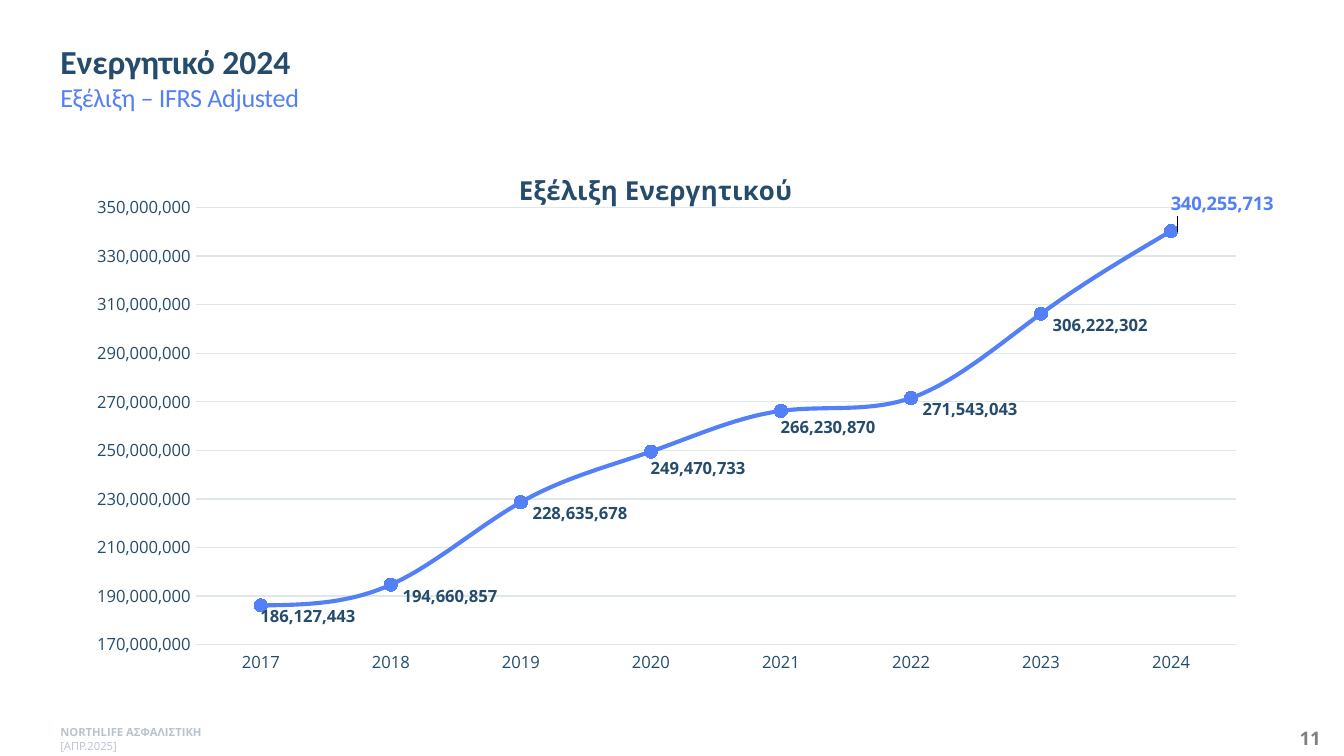
from lxml.etree import SubElement
from pptx import Presentation
from pptx.chart.data import CategoryChartData
from pptx.dml.color import RGBColor
from pptx.enum.chart import XL_CHART_TYPE, XL_LABEL_POSITION, XL_MARKER_STYLE, XL_TICK_MARK
from pptx.enum.text import MSO_AUTO_SIZE
from pptx.oxml import parse_xml
from pptx.oxml.ns import nsdecls, qn
from pptx.util import Cm, Pt

NAVY = RGBColor(0x25, 0x4C, 0x6D)
BLUE = RGBColor(0x54, 0x80, 0xF7)
GRID = RGBColor(0xE0, 0xE7, 0xEA)
PALE = RGBColor(0xB8, 0xC2, 0xD2)
GRAY = RGBColor(0x80, 0x80, 0x80)

ASSETS = {
    "2017": 186127443,
    "2018": 194660857,
    "2019": 228635678,
    "2020": 249470733,
    "2021": 266230870,
    "2022": 271543043,
    "2023": 306222302,
    "2024": 340255713,
}
LABEL_OFFSETS = [
    (-0.01, 0.02), (0, 0.02), (0, 0.02), (-0.01, 0.03),
    (-0.01, 0.03), (0, 0.02), (0, 0.02), (-0.01, -0.05),
]


def style_font(font, size, color, bold=False, name="Open Sans"):
    font.name = name
    font.size = Pt(size)
    font.bold = bold
    font.color.rgb = color


def add_text(page, left, top, width, height, text, styles, wrap=True, fit=True):
    box = page.shapes.add_textbox(Cm(left), Cm(top), Cm(width), Cm(height))
    frame = box.text_frame
    frame.word_wrap = wrap
    if fit:
        frame.auto_size = MSO_AUTO_SIZE.SHAPE_TO_FIT_TEXT
    paragraph = frame.paragraphs[0]
    paragraph.text = text
    for span, style in zip(paragraph.runs, styles):
        style_font(span.font, *style)
    return frame


def add_heading(page):
    frame = add_text(
        page, 0.89, 0.53, 16.99, 1.47,
        "Ενεργητικό 2024\vΕξέλιξη – IFRS Adjusted",
        [(18, NAVY, True, "Calibri"), (14, BLUE, False, "Calibri")], fit=False,
    )
    frame.margin_top = frame.margin_bottom = Cm(0.25)
    subtitle = frame.paragraphs[0].runs[1]
    subtitle.font._element.set("spc", "-20")


def add_footer(page):
    frame = add_text(page, 0.89, 13.59, 4.27, 0.51, "NORTHLIFE ΑΣΦΑΛΙΣΤΙΚΗ  ",
                     [(6, PALE, True)], wrap=False)
    span = frame.paragraphs[0].add_run()
    span.text = "[ΑΠΡ.2025]"
    style_font(span.font, 6, PALE)
    add_text(page, 24.31, 13.61, 0.91, 0.69, "11", [(10, GRAY, True)])


def set_layout(parent, index, **values):
    for old in parent.findall(qn("c:layout")):
        parent.remove(old)
    layout = parse_xml(f"<c:layout {nsdecls('c')}><c:manualLayout/></c:layout>")
    for tag, value in values.items():
        SubElement(layout[0], qn(f"c:{tag}")).set("val", str(value))
    parent.insert(index, layout)


def style_axes(chart):
    for axis in (chart.category_axis, chart.value_axis):
        style_font(axis.tick_labels.font, 9, NAVY)
        axis.major_tick_mark = axis.minor_tick_mark = XL_TICK_MARK.NONE
    line = chart.category_axis.format.line
    line.color.rgb = GRID
    line.width = Pt(0.75)
    values = chart.value_axis
    values.minimum_scale = 170000000
    values.maximum_scale = 350000000
    values.major_unit = 20000000
    values.tick_labels.number_format = "#,##0"
    values.tick_labels.number_format_is_linked = False
    values.format.line.fill.background()
    values.major_gridlines.format.line.color.rgb = GRID
    values.major_gridlines.format.line.width = Pt(0.75)


def style_series(series):
    series.smooth = True
    series.format.line.color.rgb = BLUE
    series.format.line.width = Pt(2.25)
    marker = series.marker
    marker.style = XL_MARKER_STYLE.CIRCLE
    marker.size = 7
    marker.format.fill.solid()
    marker.format.fill.fore_color.rgb = BLUE
    marker.format.line.color.rgb = BLUE


def place_labels(series):
    labels = series.data_labels
    labels.show_value = True
    style_font(labels.font, 9, NAVY, True)
    last = len(LABEL_OFFSETS) - 1
    for index in range(len(LABEL_OFFSETS)):
        label = series.points[index].data_label
        label.position = XL_LABEL_POSITION.RIGHT
        size, color = (10, BLUE) if index == last else (9, NAVY)
        style_font(label.font, size, color, True)
    elements = series._element.findall(".//" + qn("c:dLbl"))
    for element, (across, down) in zip(elements, LABEL_OFFSETS):
        set_layout(element, 1, x=across, y=down)


def add_assets_chart(page):
    data = CategoryChartData(number_format="#,##0")
    data.categories = list(ASSETS)
    data.add_series("Series 1", list(ASSETS.values()))
    chart = page.shapes.add_chart(
        XL_CHART_TYPE.LINE_MARKERS, Cm(1.09), Cm(2.59), Cm(23.01), Cm(10.49), data
    ).chart
    style_font(chart.font, 9, NAVY)
    chart.has_legend = False
    chart.has_title = True
    title = chart.chart_title
    title.text_frame.text = "Εξέλιξη Ενεργητικού"
    style_font(title.text_frame.paragraphs[0].runs[0].font, 14, NAVY, True)
    set_layout(title._element, 1, xMode="edge", yMode="edge", x=0.38, y=0.05)
    plot = chart.plots[0]
    plot.vary_by_categories = False
    set_layout(chart._chartSpace.chart.plotArea, 0, layoutTarget="inner",
               xMode="edge", yMode="edge", x=0.115, y=0.127, w=0.866, h=0.788)
    style_axes(chart)
    style_series(plot.series[0])
    place_labels(plot.series[0])


def main():
    deck = Presentation()
    deck.slide_width = Cm(25.4)
    deck.slide_height = Cm(14.29)
    page = deck.slides.add_slide(deck.slide_layouts[6])
    add_footer(page)
    add_assets_chart(page)
    add_heading(page)
    deck.save("out.pptx")


if __name__ == "__main__":
    main()
